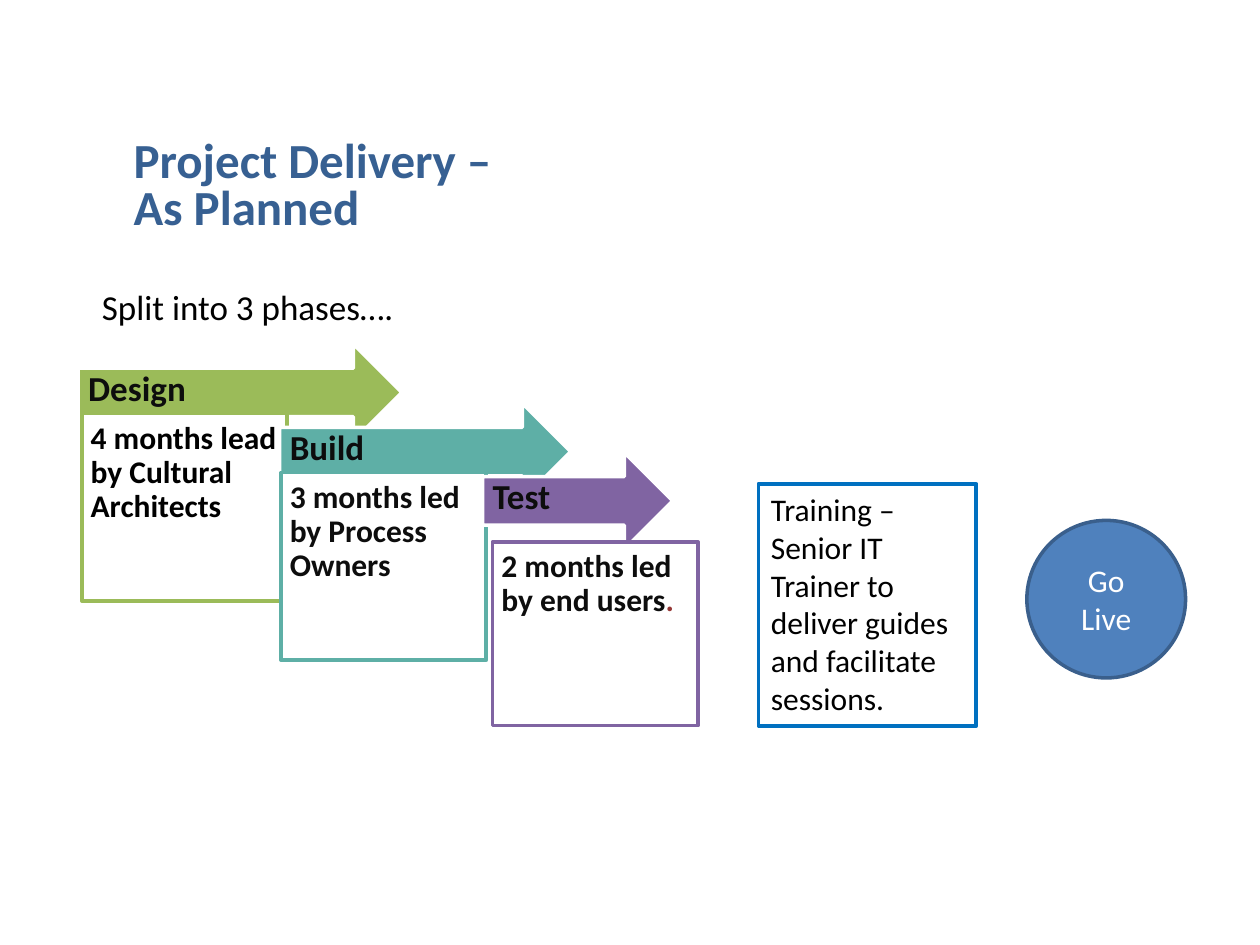
from dataclasses import dataclass

from pptx import Presentation
from pptx import util as u
from pptx.dml.color import RGBColor
from pptx.enum import shapes, text

WIDTH, HEIGHT = u.Inches(10), u.Inches(7.5)
FONT = "Calibri"

WHITE = RGBColor(0xFF, 0xFF, 0xFF)
BLACK = RGBColor(0x00, 0x00, 0x00)
INK = RGBColor(0x0D, 0x0D, 0x0D)
TITLE_BLUE = RGBColor(0x37, 0x60, 0x92)
GREEN = RGBColor(0x9B, 0xBB, 0x59)
TEAL = RGBColor(0x5E, 0xAF, 0xA6)
PURPLE = RGBColor(0x80, 0x64, 0xA2)
RED = RGBColor(0x95, 0x37, 0x35)
FRAME_BLUE = RGBColor(0x00, 0x70, 0xC0)
CIRCLE_BLUE = RGBColor(0x4F, 0x81, 0xBD)
CIRCLE_EDGE = RGBColor(0x3A, 0x5F, 0x8C)

DEFAULT_INSETS = (0.1, 0.05, 0.1, 0.05)
ARROW_INSETS = (0.08, 0.08, 0.28, 0.12)
BOX_INSETS = (0.07, 0.07, 0.07, 0.07)


@dataclass(frozen=True)
class Area:
    """A rectangle in percent of the slide's width and height."""
    left: float
    top: float
    width: float
    height: float

    def emu(self) -> tuple[int, int, int, int]:
        return (int(WIDTH * self.left / 100), int(HEIGHT * self.top / 100),
                int(WIDTH * self.width / 100), int(HEIGHT * self.height / 100))


@dataclass(frozen=True)
class Phase:
    name: str
    color: RGBColor
    arrow: Area
    box: Area
    runs: tuple[tuple[str, RGBColor], ...]


PHASES = (
    Phase("Design", GREEN, Area(6.2, 36.4, 25.7, 10.27),
          Area(6.5, 43.73, 16.3, 19.87),
          (("4 months lead by Cultural Architects", BLACK),)),
    Phase("Build", TEAL, Area(22.2, 42.67, 23.1, 10.27),
          Area(22.3, 50, 16.3, 19.87),
          (("3 months led by Process Owners", INK),)),
    Phase("Test", PURPLE, Area(38.3, 47.87, 15.1, 10.27),
          Area(39.1, 57.33, 16.3, 19.47),
          (("2 months led by end users", INK), (".", RED))),
)


def write(sp, *runs: tuple[str, RGBColor], size: float = 18, bold: bool = False,
          spacing: float = 1.0, align=text.PP_ALIGN.LEFT,
          anchor=text.MSO_ANCHOR.TOP, insets=DEFAULT_INSETS,
          wrap: bool = True) -> None:
    tf = sp.text_frame
    tf.word_wrap = wrap
    tf.auto_size = text.MSO_AUTO_SIZE.NONE
    tf.vertical_anchor = anchor
    tf.margin_left, tf.margin_top, tf.margin_right, tf.margin_bottom = map(
        u.Inches, insets)
    p = tf.paragraphs[0]
    p.alignment = align
    p.line_spacing = spacing
    for part, (words, color) in enumerate(runs):
        for row, line in enumerate(words.split("\n")):
            if row:
                p.add_line_break()
            r = p.add_run()
            r.text = line
            r.font.name = FONT
            r.font.size = u.Pt(size)
            r.font.bold = bold
            r.font.color.rgb = color


def add_shape(slide, kind, area: Area, line: RGBColor,
              fill: RGBColor | None = None, line_width: float = 2):
    sp = slide.shapes.add_shape(kind, *area.emu())
    sp.shadow.inherit = False
    if fill is None:
        sp.fill.background()
    else:
        sp.fill.solid()
        sp.fill.fore_color.rgb = fill
    sp.line.color.rgb = line
    sp.line.width = u.Pt(line_width)
    return sp


def add_phase(slide, phase: Phase) -> None:
    arrow = add_shape(slide, shapes.MSO_SHAPE.RIGHT_ARROW, phase.arrow,
                      WHITE, phase.color)
    write(arrow, (phase.name, INK), size=20, bold=True, spacing=0.9,
          anchor=text.MSO_ANCHOR.MIDDLE, insets=ARROW_INSETS)
    box = add_shape(slide, shapes.MSO_SHAPE.RECTANGLE, phase.box,
                    phase.color, WHITE)
    write(box, *phase.runs, bold=True, spacing=0.9, insets=BOX_INSETS)


def main() -> None:
    prs = Presentation()
    prs.slide_width, prs.slide_height = WIDTH, HEIGHT
    slide = prs.slides.add_slide(prs.slide_layouts[5])

    title = slide.shapes.title
    title.left, title.top, title.width, title.height = Area(
        10.6, 14.27, 34.1, 10.67).emu()
    write(title, ("Project Delivery –\nAs Planned", TITLE_BLUE), size=28,
          bold=True, spacing=0.8, insets=(0, 0.05, 0, 0), wrap=False)

    intro = slide.shapes.add_textbox(*Area(7.1, 29.6, 28.5, 5.87).emu())
    write(intro, ("Split into 3 phases….", BLACK), size=20, wrap=False)

    for phase in PHASES:
        add_phase(slide, phase)

    training = add_shape(slide, shapes.MSO_SHAPE.RECTANGLE,
                         Area(60.2, 51.2, 17.3, 25.6), FRAME_BLUE,
                         line_width=2.25)
    write(training, ("Training – Senior IT Trainer to deliver guides and "
                     "facilitate sessions.", BLACK))

    go_live = add_shape(slide, shapes.MSO_SHAPE.OVAL,
                        Area(81.5, 55.07, 12.6, 16.67), CIRCLE_EDGE,
                        CIRCLE_BLUE)
    write(go_live, ("Go Live", WHITE), align=text.PP_ALIGN.CENTER,
          anchor=text.MSO_ANCHOR.MIDDLE)

    prs.save("out.pptx")


if __name__ == "__main__":
    main()
